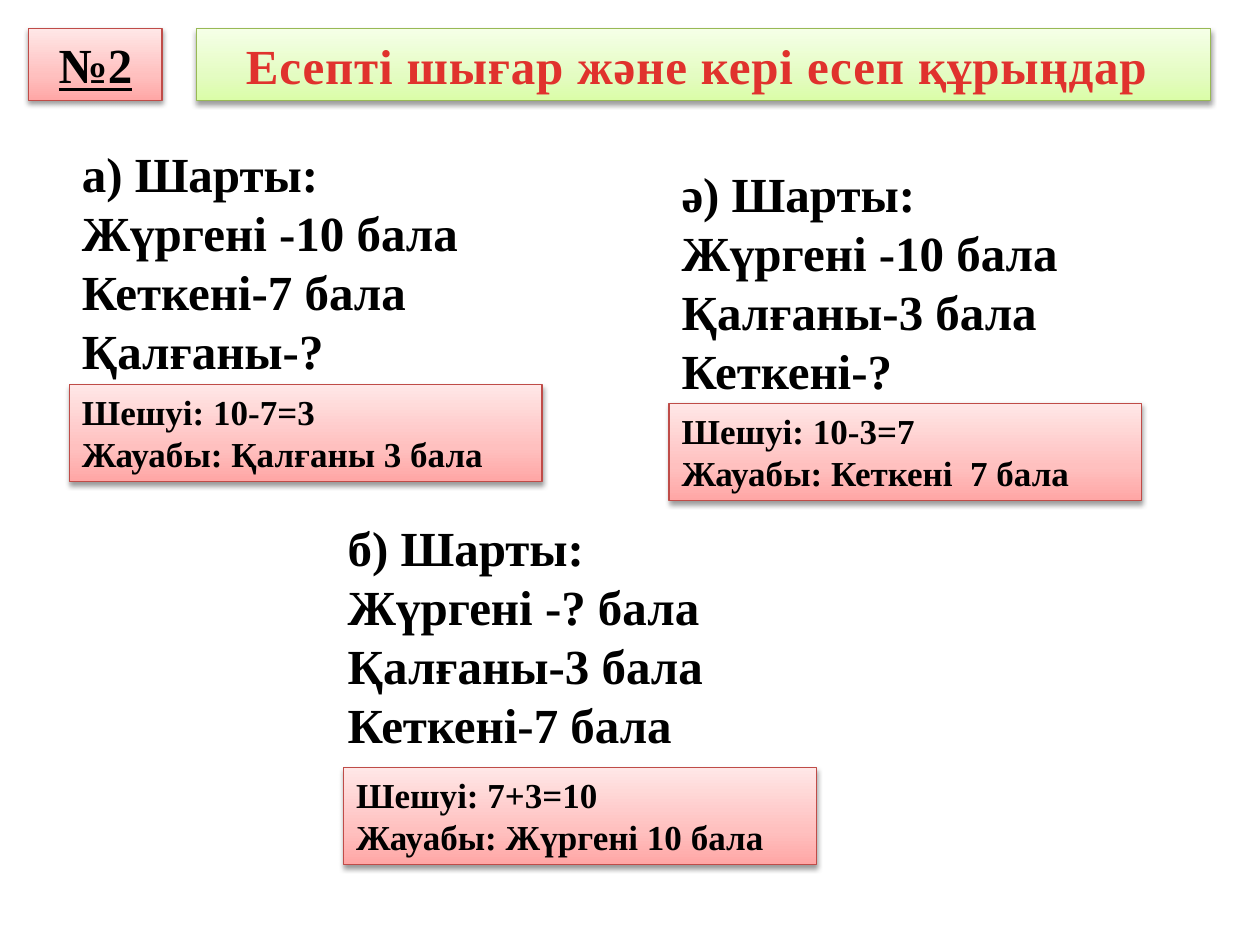
from pptx import Presentation
from pptx import util as u
from pptx.dml.color import RGBColor
from pptx.enum import shapes, text
from pptx.oxml import parse_xml
from pptx.oxml.ns import nsdecls, qn

BLACK = RGBColor(0x00, 0x00, 0x00)
TITLE_RED = RGBColor(0xE0, 0x32, 0x2D)
RED_LINE = RGBColor(0xBF, 0x4C, 0x48)
GREEN_LINE = RGBColor(0x98, 0xB9, 0x55)
RED_PANEL = (RED_LINE, [(0, "FFA6A5"), (35, "FFC0BF"), (100, "FFE7E7")])
GREEN_PANEL = (GREEN_LINE, [(0, "DAFDA7"), (35, "E4FCC2"), (100, "F5FFE7")])

HEADER_TOP, HEADER_HEIGHT = 0.58, 1.45
BADGE = ("№2", 0.58, 2.69)
TITLE = ("Есепті шығар және кері есеп құрыңдар ", 3.96, 20.45)
ANSWER_SIZE = (9.53, 1.96)
PROBLEMS = [
    {
        "condition": ["а) Шарты:", "Жүргені -10 бала", "Кеткені-7 бала", "Қалғаны-?"],
        "condition_box": (1.4, 2.77, 8.74, 5.89),
        "answer": ["Шешуі: 10-7=3", "Жауабы: Қалғаны 3 бала"],
        "answer_at": (1.4, 7.75),
    },
    {
        "condition": ["ә) Шарты:", "Жүргені -10 бала", "Қалғаны-3 бала", "Кеткені-?"],
        "condition_box": (13.49, 3.18, 8.53, 5.82),
        "answer": ["Шешуі: 10-3=7", "Жауабы: Кеткені  7 бала"],
        "answer_at": (13.49, 8.13),
    },
    {
        "condition": ["б) Шарты:", "Жүргені -? бала", "Қалғаны-3 бала", "Кеткені-7 бала"],
        "condition_box": (6.76, 10.31, 8.33, 5.82),
        "answer": ["Шешуі: 7+3=10", "Жауабы: Жүргені 10 бала"],
        "answer_at": (6.93, 15.47),
    },
]


def write_lines(shape, lines, size, align=text.PP_ALIGN.LEFT, color=BLACK, **extra):
    frame = shape.text_frame
    frame.word_wrap = True
    frame.auto_size = text.MSO_AUTO_SIZE.NONE
    frame.vertical_anchor = text.MSO_ANCHOR.TOP
    font_format = {"name": "Times New Roman", "size": u.Pt(size), "bold": True, **extra}
    for index, line in enumerate(lines):
        paragraph = frame.add_paragraph() if index else frame.paragraphs[0]
        paragraph.alignment = align
        run = paragraph.add_run()
        run.text = line
        for name, value in font_format.items():
            setattr(run.font, name, value)
        run.font.color.rgb = color


def style_panel(shape, style):
    line_color, stops = style
    shape.fill.gradient()
    shape.fill.gradient_angle = 90
    properties = shape.element.spPr
    stop_list = properties.find(".//" + qn("a:gsLst"))
    for stop in list(stop_list):
        stop_list.remove(stop)
    for position, color in stops:
        stop_list.append(parse_xml(
            f'<a:gs {nsdecls("a")} pos="{position * 1000}"><a:srgbClr val="{color}"/></a:gs>'))
    shape.line.color.rgb = line_color
    shape.line.width = u.Pt(0.75)
    shape.shadow.inherit = False
    properties.find(qn("a:effectLst")).append(parse_xml(
        f'<a:outerShdw {nsdecls("a")} blurRad="{u.Pt(3.1)}" dist="{u.Pt(1.6)}" dir="5400000" '
        'rotWithShape="0"><a:srgbClr val="000000"><a:alpha val="38000"/></a:srgbClr></a:outerShdw>'))


def add_panel(slide, box, style):
    shape = slide.shapes.add_shape(shapes.MSO_SHAPE.RECTANGLE, *map(u.Cm, box))
    style_panel(shape, style)
    return shape


def main():
    presentation = Presentation()
    presentation.slide_width, presentation.slide_height = u.Cm(25.4), u.Cm(19.05)
    slide = presentation.slides.add_slide(presentation.slide_layouts[5])

    label, left, width = BADGE
    badge = add_panel(slide, (left, HEADER_TOP, width, HEADER_HEIGHT), RED_PANEL)
    write_lines(badge, [label], 28, text.PP_ALIGN.CENTER, underline=True)

    heading, left, width = TITLE
    title = slide.shapes.title
    box = (left, HEADER_TOP, width, HEADER_HEIGHT)
    for name, value in zip(("left", "top", "width", "height"), box):
        setattr(title, name, u.Cm(value))
    style_panel(title, GREEN_PANEL)
    write_lines(title, [heading], 28, text.PP_ALIGN.CENTER, TITLE_RED)
    title.text_frame.paragraphs[0].runs[0].font._element.set("spc", "50")

    for problem in PROBLEMS:
        condition = slide.shapes.add_textbox(*map(u.Cm, problem["condition_box"]))
        write_lines(condition, problem["condition"], 28)
        answer = add_panel(slide, problem["answer_at"] + ANSWER_SIZE, RED_PANEL)
        write_lines(answer, problem["answer"], 20)

    presentation.save("out.pptx")


if __name__ == "__main__":
    main()
